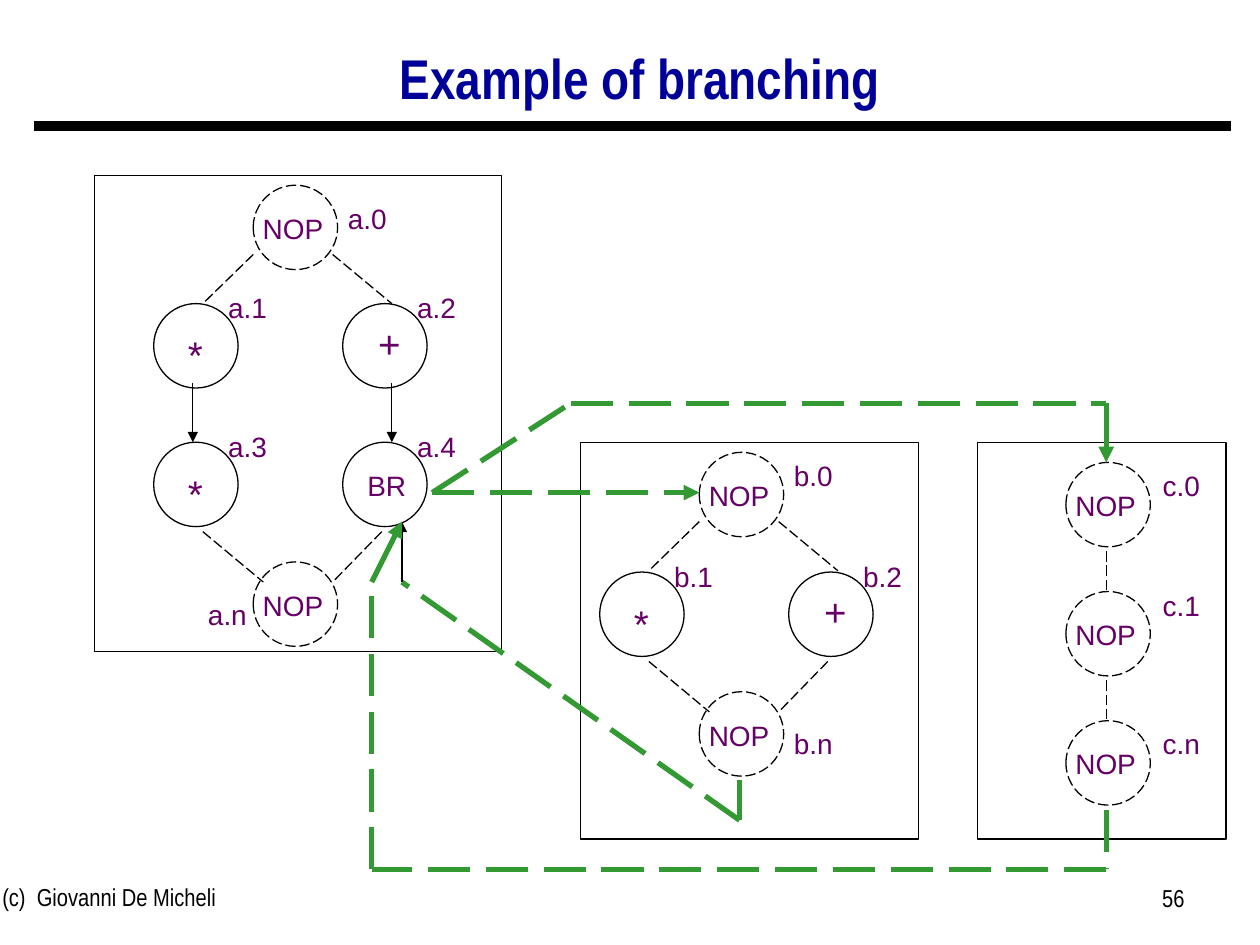
import dataclasses

import lxml.etree
import pptx
import pptx.dml.color
import pptx.enum.dml
import pptx.enum.shapes
import pptx.enum.text
import pptx.oxml.ns
import pptx.util

Inches = pptx.util.Inches
Align = pptx.enum.text.PP_ALIGN


@dataclasses.dataclass(frozen=True)
class Theme:
    """Colours, fonts and sizes of the slide."""
    ink: str = "000000"
    title: str = "000099"
    label: str = "660066"
    flow: str = "339933"
    body: str = "Arial"
    narrow: str = "Arial Narrow"
    head: int = 32
    sign: int = 22
    text: int = 16
    foot: int = 14
    thin: float = 0.75
    thick: float = 3
    rule: float = 6


THEME = Theme()
SIZE = 0.67
INSETS = {
    "NOP": (-0.08, 0.16, 0.79, 0.37),
    "BR": (-0.08, 0.16, 0.86, 0.37),
    "*": (0.08, 0.17, 0.5, 0.47),
    "+": (0.08, 0.08, 0.58, 0.47),
}


def paint(hue):
    """Turn a hex string into a colour."""
    return pptx.dml.color.RGBColor.from_string(hue)


def write(slide, box, words, size=THEME.text, hue=THEME.label,
          face=THEME.body, align=Align.CENTER):
    """Place one paragraph of text in a box and return its shape."""
    shape = slide.shapes.add_textbox(*map(Inches, box))
    shape.text_frame.word_wrap = True
    para = shape.text_frame.paragraphs[0]
    para.text = words
    para.alignment = align
    para.font.size = pptx.util.Pt(size)
    para.font.name = face
    para.font.color.rgb = paint(hue)
    return shape


def outline(slide, kind, box, dashed=False):
    """Draw an unfilled shape with a thin line."""
    shape = slide.shapes.add_shape(kind, *map(Inches, box))
    shape.shadow.inherit = False
    shape.fill.background()
    shape.line.color.rgb = paint(THEME.ink)
    shape.line.width = pptx.util.Pt(THEME.thin)
    if dashed:
        shape.line.dash_style = pptx.enum.dml.MSO_LINE.LONG_DASH


def link(slide, start, end, hue=THEME.ink, width=THEME.thin,
         dashed=False, arrow=False):
    """Draw a straight line, dashed or with an arrowhead if asked."""
    line = slide.shapes.add_connector(
        pptx.enum.shapes.MSO_CONNECTOR.STRAIGHT, *map(Inches, (*start, *end)))
    line.line.color.rgb = paint(hue)
    line.line.width = pptx.util.Pt(width)
    if dashed:
        line.line.dash_style = pptx.enum.dml.MSO_LINE.LONG_DASH
    qn = pptx.oxml.ns.qn
    props = line._element.spPr
    if arrow:
        lxml.etree.SubElement(props.find(qn("a:ln")), qn("a:tailEnd"), type="triangle")
    lxml.etree.SubElement(props, qn("a:effectLst"))


def frame(slide, box):
    """Draw the border of one graph."""
    outline(slide, pptx.enum.shapes.MSO_SHAPE.RECTANGLE, box)


def node(slide, x, y, words):
    """Draw a round node, dashed when it is a NOP."""
    outline(slide, pptx.enum.shapes.MSO_SHAPE.OVAL, (x, y, SIZE, SIZE), words == "NOP")
    dx, dy, width, height = INSETS[words]
    size = THEME.sign if words in "*+" else THEME.text
    write(slide, (x + dx, y + dy, width, height), words, size)


def label(slide, x, y, words):
    """Write the name of a node."""
    write(slide, (x, y, 0.55, 0.37), words)


def pair(slide, x, y, words, names):
    """Draw a row of two nodes with their names."""
    for left, word, name in zip((x, x + 1.5), words, names):
        node(slide, left, y, word)
        label(slide, left + 0.47, y - 0.15, name)


def fork(slide, x, y):
    """Draw a source node and its two edges down."""
    node(slide, x + 0.79, y, "NOP")
    link(slide, (x + 0.79, y + 0.55), (x + 0.39, y + 0.94), dashed=True)
    link(slide, (x + 1.42, y + 0.55), (x + 1.89, y + 0.94), dashed=True)


def merge(slide, x, y):
    """Draw the sink node and its two edges below a row at y."""
    link(slide, (x + 0.39, y + 0.71), (x + 0.87, y + 1.11), dashed=True)
    link(slide, (x + 1.81, y + 0.71), (x + 1.42, y + 1.11), dashed=True)
    node(slide, x + 0.79, y + 0.95, "NOP")


def main_graph(slide, box):
    """Draw graph a, which holds the branch node."""
    frame(slide, box)
    x, y = box[0] + 0.47, box[1] + 0.08
    upper, lower = y + 0.94, y + 2.04
    fork(slide, x, y)
    label(slide, x + 1.42, y + 0.08, "a.0")
    pair(slide, x, upper, ("*", "+"), ("a.1", "a.2"))
    pair(slide, x, lower, ("*", "BR"), ("a.3", "a.4"))
    for left in (x + 0.31, x + 1.89):
        link(slide, (left, upper + 0.63), (left, lower), arrow=True)
    merge(slide, x, lower)
    label(slide, x + 0.31, lower + 1.18, "a.n")


def side_graph(slide, box):
    """Draw graph b, the first branch body."""
    frame(slide, box)
    x, y = box[0] + 0.15, box[1] + 0.08
    row = y + 0.95
    fork(slide, x, y)
    label(slide, x + 1.42, y, "b.0")
    pair(slide, x, row, ("*", "+"), ("b.1", "b.2"))
    merge(slide, x, row)
    label(slide, x + 1.42, row + 1.18, "b.n")


def chain_graph(slide, box):
    """Draw graph c, the second branch body."""
    frame(slide, box)
    x, y, step = box[0] + 0.7, box[1] + 0.16, 1.025
    for row, (name, drop) in enumerate((("c.0", 0), ("c.1", 0.95), ("c.n", 2.05))):
        top = y + row * step
        node(slide, x, top, "NOP")
        label(slide, x + 0.64, y + drop, name)
        if row:
            link(slide, (x + 0.32, top - 0.32), (x + 0.32, top), dashed=True)


def route(slide, points, arrow=False):
    """Draw a thick dashed path, whose last leg may be a solid arrow."""
    legs = list(zip(points, points[1:]))
    for index, (start, end) in enumerate(legs):
        tip = arrow and index == len(legs) - 1
        link(slide, start, end, THEME.flow, THEME.thick, not tip, tip)


def flows(slide):
    """Draw the control paths between the graphs."""
    branch, back, lane = (3.43, 3.91), (3.19, 4.14), 8.78
    link(slide, branch, (5.55, 3.91), THEME.flow, THEME.thick, True, True)
    route(slide, ((5.87, 6.19), (5.87, 6.51), (3.19, 4.62)))
    link(slide, (3.19, 4.62), back, arrow=True)
    route(slide, ((lane, 6.43), (lane, 6.9), (2.95, 6.9), (2.95, 4.62), back), True)
    route(slide, (branch, (4.53, 3.2), (lane, 3.2), (lane, 3.67)), True)


def header(slide, box):
    """Write the title and draw the rule below it."""
    link(slide, (0.27, 1), (9.77, 1), width=THEME.rule)
    shape = write(slide, box, "Example of branching", THEME.head, THEME.title, THEME.narrow)
    shape.text_frame.vertical_anchor = pptx.enum.text.MSO_ANCHOR.MIDDLE
    para = shape.text_frame.paragraphs[0]
    para.font.bold = True
    para.line_spacing = 0.9


def footer(slide, y):
    """Write the credit line and the slide number."""
    look = (THEME.foot, THEME.ink, THEME.narrow)
    credit = write(slide, (-0.08, y, 3.17, 0.52), "(c)  Giovanni De Micheli", *look)
    credit.text_frame.paragraphs[0].alignment = Align.LEFT
    write(slide, (7.17, y + 0.01, 2.33, 0.52), "56", *look, Align.RIGHT)


def main():
    """Build and save the slide."""
    deck = pptx.Presentation()
    deck.slide_width, deck.slide_height = Inches(10), Inches(7.5)
    slide = deck.slides.add_slide(deck.slide_layouts[6])
    header(slide, (0.83, 0.21, 8.5, 0.87))
    footer(slide, 6.95)
    main_graph(slide, (0.75, 1.39, 3.23, 3.78))
    side_graph(slide, (4.61, 3.51, 2.68, 3.15))
    chain_graph(slide, (7.76, 3.51, 1.97, 3.15))
    flows(slide)
    deck.save("out.pptx")


if __name__ == "__main__":
    main()
